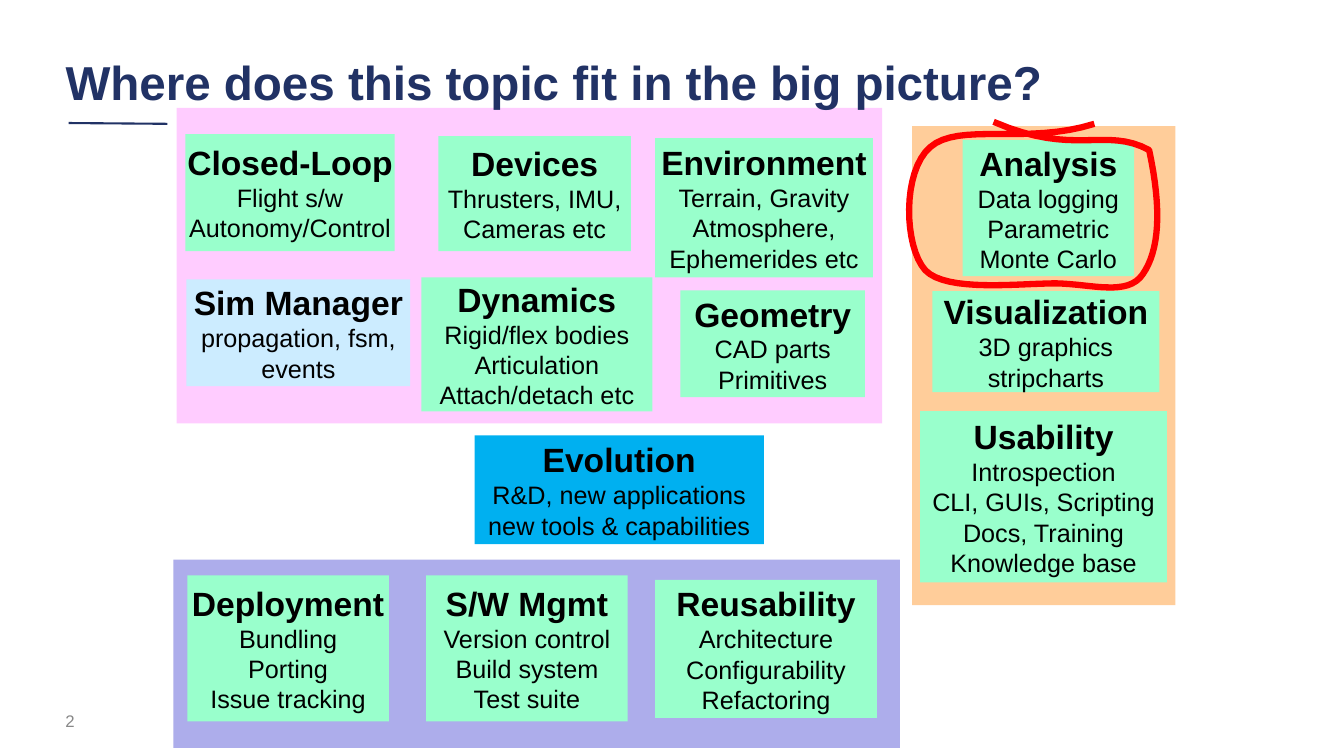
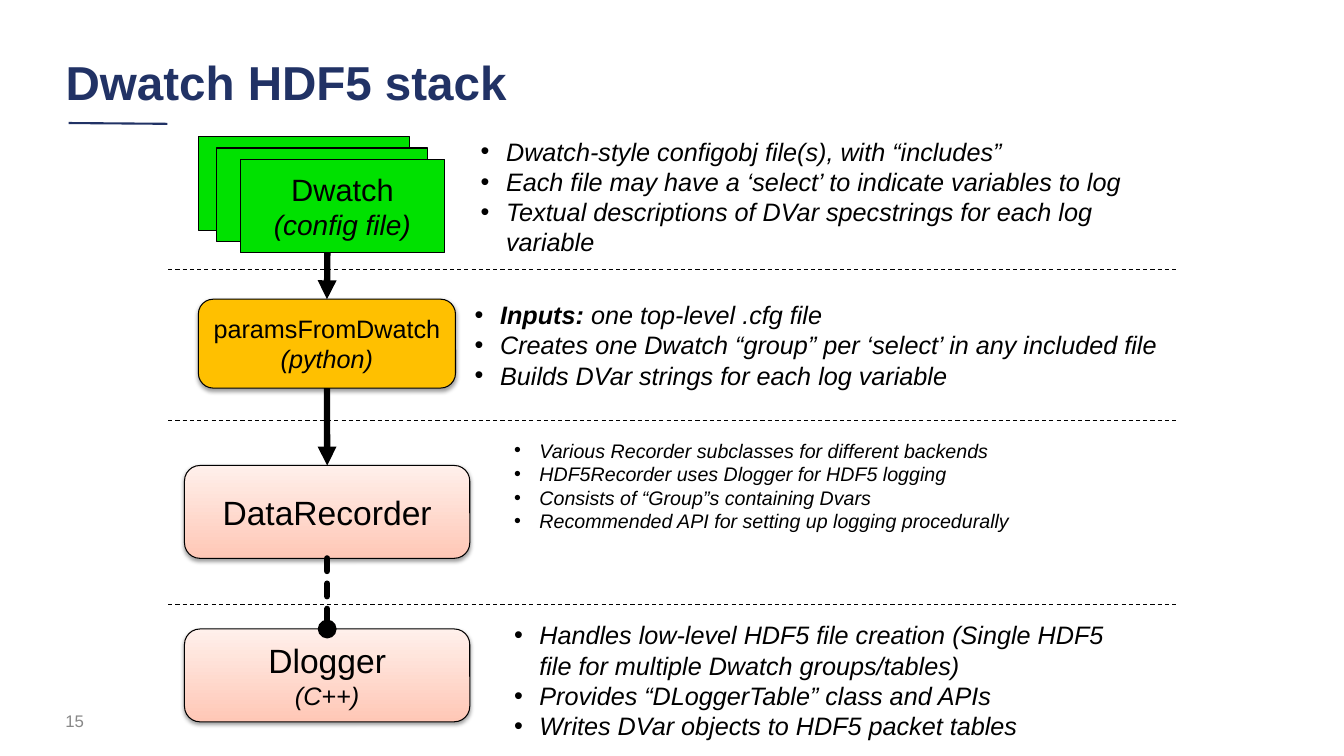
"""Build two slides: the topic map and the Dwatch HDF5 stack."""
from lxml import etree
from pptx import Presentation
from pptx.dml.color import RGBColor
from pptx.enum.dml import MSO_LINE
from pptx.enum.shapes import MSO_CONNECTOR, MSO_SHAPE
from pptx.enum.text import MSO_ANCHOR, MSO_AUTO_SIZE, PP_ALIGN
from pptx.oxml.ns import qn
from pptx.util import Cm, Pt

RECT, ROUNDED = MSO_SHAPE.RECTANGLE, MSO_SHAPE.ROUNDED_RECTANGLE
STRAIGHT = MSO_CONNECTOR.STRAIGHT
DASH, SHORT_DASH = MSO_LINE.DASH, MSO_LINE.SQUARE_DOT
SHORT_DASH = MSO_LINE.SQUARE_DOT if not hasattr(MSO_LINE, "SYS_DASH") else MSO_LINE.SYS_DASH
TOP, MIDDLE = MSO_ANCHOR.TOP, MSO_ANCHOR.MIDDLE
LEFT, CENTER = PP_ALIGN.LEFT, PP_ALIGN.CENTER
NO_FIT = MSO_AUTO_SIZE.NONE

FONT = "Arial"
NAVY, GRAY, BLACK, RED = "213265", "888888", "000000", "FF0000"
MINT, SKY, AZURE = "99FFCC", "CCECFF", "00B0F0"
PINK, LAVENDER, PEACH = "FFCCFF", "ADADEB", "FFCD9A"
GREEN, AMBER, SALMON, BLUSH = "00E100", "FFC000", "FFC7B6", "FFF0EB"
color = RGBColor.from_string


def add_line(slide, start, end, hue, width, dash=None, tip=None):
    """Draw a straight line, optionally dashed or tipped."""
    line = slide.shapes.add_connector(STRAIGHT, *map(Cm, start + end))
    line.line.color.rgb = color(hue)
    line.line.width = Pt(width)
    if dash:
        line.line.dash_style = dash
    if tip:
        etree.SubElement(line.line._get_or_add_ln(), qn("a:tailEnd"), type=tip)
    etree.SubElement(line.element.spPr, qn("a:effectLst"))
    return line


def add_box(slide, kind, place, fill, outline=None, lines=()):
    """Draw a box with centred lines given as (text, size, bold, italic)."""
    box = slide.shapes.add_shape(kind, *map(Cm, place))
    box.shadow.inherit = False
    box.fill.solid()
    box.fill.fore_color.rgb = color(fill)
    if outline:
        box.line.color.rgb = color(outline)
        box.line.width = Pt(0.75)
    else:
        box.line.fill.background()
    frame = box.text_frame
    frame.word_wrap = False
    frame.vertical_anchor = MIDDLE
    frame.text = "\n".join(line[0] for line in lines)
    for paragraph, (_, size, bold, italic) in zip(frame.paragraphs, lines):
        paragraph.alignment = CENTER
        font = paragraph.runs[0].font
        font.name, font.size, font.bold, font.italic = FONT, Pt(size), bold, italic
        font.color.rgb = color(BLACK)
    return box


prs = Presentation()
prs.slide_width, prs.slide_height = Cm(33.87), Cm(19.05)
topic_map = prs.slides.add_slide(prs.slide_layouts[5])
stack = prs.slides.add_slide(prs.slide_layouts[4])

title_rule = add_line(topic_map, (1.73, 3.1), (4.22, 3.12), NAVY, 1.5)
prs.slide_master.shapes.element.append(title_rule.element)

for place, fill in [
    ((22.99, 3.18, 6.63, 12.07), PEACH),
    ((4.37, 14.1, 18.31, 4.75), LAVENDER),
    ((4.45, 2.72, 17.78, 7.95), PINK),
]:
    add_box(topic_map, RECT, place, fill)

topics = [
    ((10.62, 6.99, 5.82, 3.38), MINT, "Dynamics",
     ["Rigid/flex bodies", "Articulation", "Attach/detach etc"]),
    ((11.05, 3.43, 4.85, 2.9), MINT, "Devices", ["Thrusters, IMU,", "Cameras etc"]),
    ((16.51, 3.48, 5.49, 3.51), MINT, "Environment",
     ["Terrain, Gravity", "Atmosphere,", "Ephemerides etc"]),
    ((17.15, 7.32, 4.65, 2.69), MINT, "Geometry", ["CAD parts", "Primitives"]),
    ((23.5, 7.34, 5.72, 2.54), MINT, "Visualization", ["3D graphics", "stripcharts"]),
    ((24.26, 3.53, 4.32, 3.43), MINT, "Analysis",
     ["Data logging", "Parametric", "Monte Carlo"]),
    ((4.67, 3.38, 5.28, 2.95), MINT, "Closed-Loop", ["Flight s/w", "Autonomy/Control"]),
    ((23.19, 10.36, 6.22, 4.32), MINT, "Usability",
     ["Introspection", "CLI, GUIs, Scripting", "Docs, Training", "Knowledge base"]),
    ((10.74, 14.5, 5.08, 3.68), MINT, "S/W Mgmt",
     ["Version control", "Build system", "Test suite"]),
    ((16.51, 14.61, 5.59, 3.48), MINT, "Reusability",
     ["Architecture", "Configurability", "Refactoring"]),
    ((4.72, 14.5, 5.08, 3.68), MINT, "Deployment",
     ["Bundling", "Porting", "Issue tracking"]),
    ((11.96, 10.97, 7.29, 2.74), AZURE, "Evolution",
     ["R&D, new applications", "new tools & capabilities"]),
    ((4.7, 7.04, 5.64, 2.69), SKY, "Sim Manager", ["propagation, fsm,", "events"]),
]
for place, fill, heading, details in topics:
    lines = [(heading, 24, True, False)]
    lines += [(detail, 18, False, False) for detail in details]
    add_box(topic_map, RECT, place, fill, lines=lines)

loop_start = (27.58, 3.12)
loop_curves = [
    ((25.88, 3.66), (24.16, 3.07), (23.44, 3.71)),
    ((22.73, 4.32), (22.78, 6.22), (23.32, 6.81)),
    ((23.85, 7.37), (25.7, 7.14), (26.62, 7.14)),
    ((27.53, 7.16), (28.42, 7.47), (28.8, 6.91)),
    ((29.21, 6.32), (29.29, 5.31), (28.96, 3.78)),
    ((27.84, 3.18), (27.1, 3.96), (25.04, 3.07)),
]
STEPS = 16
loop_points = []
corner = loop_start
for first, second, end in loop_curves:
    for step in range(1, STEPS + 1):
        t = step / STEPS
        loop_points.append(tuple(
            Cm((1 - t) ** 3 * a + 3 * (1 - t) ** 2 * t * b + 3 * (1 - t) * t ** 2 * c + t ** 3 * d)
            for a, b, c, d in zip(corner, first, second, end)))
    corner = end
loop_path = topic_map.shapes.build_freeform(*map(Cm, loop_start))
loop_path.add_line_segments(loop_points, close=False)
analysis_loop = loop_path.convert_to_shape()
analysis_loop.shadow.inherit = False
analysis_loop.fill.background()
analysis_loop.line.color.rgb = color(RED)
analysis_loop.line.width = Pt(4.5)

for place in [(5, 3.45, 5.31, 2.36), (5.46, 3.73, 5.31, 2.36)]:
    add_box(stack, RECT, place, GREEN, BLACK)
add_box(stack, RECT, (6.05, 4.01, 5.16, 2.36), GREEN, BLACK,
        [("Dwatch", 22, False, False), ("(config file)", 20, False, True)])
params = add_box(stack, ROUNDED, (5, 7.54, 6.48, 2.24), AMBER, BLACK,
                 [("paramsFromDwatch", 18, False, False), ("(python)", 18, False, True)])
recorder = add_box(stack, ROUNDED, (4.65, 11.73, 7.19, 2.34), SALMON, BLACK,
                   [("DataRecorder", 24, False, False)])
dlogger = add_box(stack, ROUNDED, (4.65, 15.85, 7.19, 2.34), SALMON, BLACK,
                  [("Dlogger", 24, False, False), ("(C++)", 18, False, True)])

for stage in (recorder, dlogger):
    stage.fill.gradient()
    stage.fill.gradient_angle = 90
    for stop, hue in zip(stage.fill.gradient_stops, (SALMON, BLUSH)):
        stop.color.rgb = color(hue)
for stage in (params, recorder, dlogger):
    effects = stage.element.spPr.find(qn("a:effectLst"))
    shadow = etree.SubElement(effects, qn("a:outerShdw"), blurRad=str(Pt(3.1)),
                              dist=str(Pt(1.6)), dir="5400000", rotWithShape="0")
    shade = etree.SubElement(shadow, qn("a:srgbClr"), val=BLACK)
    etree.SubElement(shade, qn("a:alpha"), val="38000")

for source, target, dash, tip in [
    (None, params, None, "triangle"),
    (params, recorder, None, "triangle"),
    (recorder, dlogger, SHORT_DASH, "oval"),
]:
    flow = add_line(stack, (8.25, 6.37), (8.25, 7.54), BLACK, 4.5, dash, tip)
    if source:
        flow.begin_connect(source, 2)
    flow.end_connect(target, 0)
    if dash:
        flow.line._get_or_add_ln().set("cap", "rnd")

for y in (6.78, 10.59, 15.24):
    add_line(stack, (4.24, y), (29.64, y), BLACK, 0.75, DASH)

stage_notes = [
    ((11.86, 3.3, 17.53, 3.3), 18, [
        "Dwatch-style configobj file(s), with “includes”",
        "Each file may have a ‘select’ to indicate variables to log",
        "Textual descriptions of DVar specstrings for each log variable"]),
    ((11.71, 7.42, 17.93, 2.54), 18, [
        "Inputs: one top-level .cfg file",
        "Creates one Dwatch “group” per ‘select’ in any included file",
        "Builds DVar strings for each log variable"]),
    ((12.7, 10.92, 16.71, 4.06), 14, [
        "Various Recorder subclasses for different backends",
        "HDF5Recorder uses Dlogger for HDF5 logging",
        "Consists of “Group”s containing Dvars",
        "Recommended API for setting up logging procedurally"]),
    ((12.7, 15.49, 15.67, 3.3), 18, [
        "Handles low-level HDF5 file creation (Single HDF5 file for multiple Dwatch groups/tables)",
        "Provides “DLoggerTable” class and APIs",
        "Writes DVar objects to HDF5 packet tables"]),
]
for notes, (place, size, lines) in zip(list(stack.placeholders)[1:], stage_notes):
    notes.left, notes.top, notes.width, notes.height = map(Cm, place)
    frame = notes.text_frame
    frame.auto_size, frame.vertical_anchor, frame.word_wrap = NO_FIT, TOP, True
    frame.text = "\n".join(lines)
    for paragraph, line in zip(frame.paragraphs, lines):
        paragraph.space_before = Pt(0)
        properties = paragraph._p.get_or_add_pPr()
        properties.set("marL", str(Cm(0.64)))
        properties.set("indent", str(-Cm(0.64)))
        bullet_color = etree.SubElement(properties, qn("a:buClr"))
        etree.SubElement(bullet_color, qn("a:srgbClr"), val=BLACK)
        etree.SubElement(properties, qn("a:buFont"), typeface=FONT)
        etree.SubElement(properties, qn("a:buChar"), char="•")
        lead, colon, detail = line.rpartition(": ")
        paragraph.clear()
        for part, bold in ((lead + colon, True), (detail, False)):
            if part:
                run = paragraph.add_run()
                run.text = part
                run.font.name, run.font.size = FONT, Pt(size)
                run.font.bold, run.font.italic = bold, True
                run.font.color.rgb = color(BLACK)

for slide, heading, number in [
    (topic_map, "Where does this topic fit in the big picture?", "2"),
    (stack, "Dwatch HDF5 stack", "15"),
]:
    title = slide.shapes.title
    title.left, title.top, title.width, title.height = map(Cm, (1.4, 1.17, 28.24, 1.93))
    slide.shapes.element.append(title.element)
    page = slide.shapes.add_textbox(*map(Cm, (1.4, 17.65, 7.62, 1.02)))
    for holder, text, size, bold, hue in [
        (title, heading, 34, True, NAVY),
        (page, number, 12, False, GRAY),
    ]:
        frame = holder.text_frame
        frame.text = text
        frame.auto_size, frame.vertical_anchor, frame.word_wrap = NO_FIT, MIDDLE, True
        paragraph = frame.paragraphs[0]
        paragraph.alignment = LEFT
        paragraph.line_spacing = 0.9 if holder is title else 1.0
        font = paragraph.runs[0].font
        font.name, font.size, font.bold = FONT, Pt(size), bold
        font.color.rgb = color(hue)

prs.save("out.pptx")
